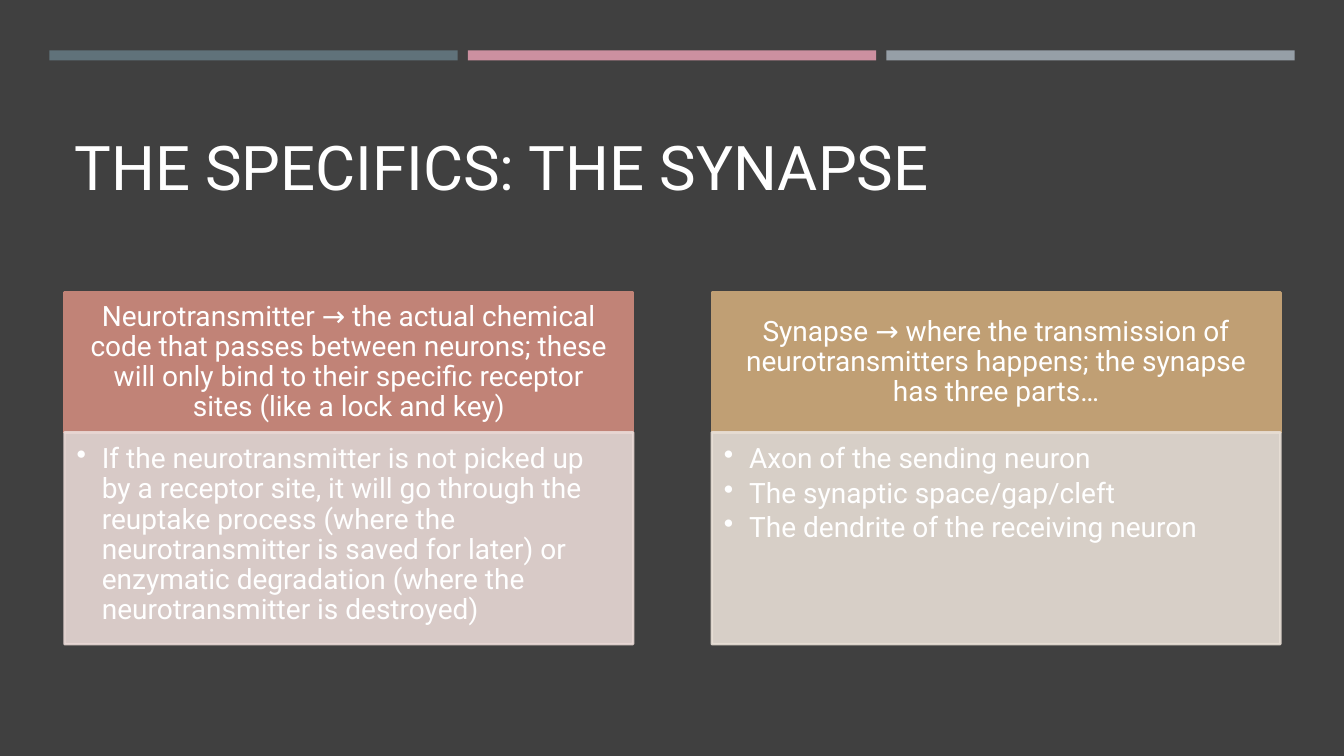
"""Build the slide on the synapse: a title over two definition cards."""
import pptx
import pptx.util
import pptx.dml.color
import pptx.enum.shapes
import pptx.enum.text
import pptx.oxml
import pptx.oxml.ns

Inches, Pt = pptx.util.Inches, pptx.util.Pt
RGB = pptx.dml.color.RGBColor
ALIGN, ANCHOR = pptx.enum.text.PP_ALIGN, pptx.enum.text.MSO_ANCHOR
RECT = pptx.enum.shapes.MSO_SHAPE.RECTANGLE

TITLE = "THE SPECIFICS: THE SYNAPSE"
CARDS = [
    {
        "head": "Neurotransmitter → the actual chemical code that passes between neurons; "
                "these will only bind to their specific receptor sites (like a lock and key)",
        "points": [
            "If the neurotransmitter is not picked up by a receptor site, it will go through "
            "the reuptake process (where the neurotransmitter is saved for later) or "
            "enzymatic degradation (where the neurotransmitter is destroyed)",
        ],
        "colors": ("rose", "pale rose"),
    },
    {
        "head": "Synapse → where the transmission of neurotransmitters happens; "
                "the synapse has three parts…",
        "points": [
            "Axon of the sending neuron",
            "The synaptic space/gap/cleft",
            "The dendrite of the receiving neuron",
        ],
        "colors": ("sand", "pale sand"),
    },
]
BARS = ["slate", "pink", "silver"]
COLORS = {
    "background": "404040", "text": "FFFFFF",
    "slate": "60727A", "pink": "CC90A0", "silver": "969FA7",
    "rose": "C18377", "pale rose": "E9D9D6",
    "sand": "C09F74", "pale sand": "E8DFD6",
}
FONT = "Roboto"

BAR_LEFT, BAR_TOP, BAR_W, BAR_H, BAR_STEP = 0.49, 0.5, 4.05, 0.1, 4.15
CARD_LEFT, CARD_TOP, CARD_W, CARD_STEP = 0.64, 2.9, 5.64, 6.42
HEAD_H, BODY_H = 1.39, 2.1


def color(name):
    return RGB.from_string(COLORS[name])


def add_box(s, left, top, width, height, fill, outlined=False, opacity=100):
    sp = s.shapes.add_shape(RECT, Inches(left), Inches(top), Inches(width), Inches(height))
    sp.shadow.inherit = False
    sp.fill.solid()
    sp.fill.fore_color.rgb = color(fill)
    if outlined:
        sp.line.color.rgb = color(fill)
        sp.line.width = Pt(1.75)
    else:
        sp.line.fill.background()
    if opacity < 100:
        for clr in sp.element.spPr.iter(pptx.oxml.ns.qn("a:srgbClr")):
            alpha = pptx.oxml.parse_xml(
                f'<a:alpha {pptx.oxml.ns.nsdecls("a")} val="{opacity * 1000}"/>')
            clr.append(alpha)
    return sp


def add_bullet(p):
    pPr = p._p.get_or_add_pPr()
    pPr.set("marL", str(Inches(0.25)))
    pPr.set("indent", str(-Inches(0.25)))
    pPr.append(pptx.oxml.parse_xml(f'<a:buChar {pptx.oxml.ns.nsdecls("a")} char="•"/>'))


def write(sp, lines, size, insets, anchor, align=ALIGN.LEFT, after=0, bullets=False):
    tf = sp.text_frame
    tf.word_wrap = True
    tf.vertical_anchor = anchor
    tf.margin_left, tf.margin_top, tf.margin_right, tf.margin_bottom = map(Inches, insets)
    tf.text = "\n".join(lines)
    for p in tf.paragraphs:
        p.alignment = align
        p.line_spacing = 0.9
        p.space_after = Pt(after)
        if bullets:
            add_bullet(p)
        for r in p.runs:
            r.font.name = FONT
            r.font.size = Pt(size)
            r.font.color.rgb = color("text")


def add_card(s, left, card):
    head_fill, body_fill = card["colors"]
    head = add_box(s, left, CARD_TOP, CARD_W, HEAD_H, head_fill, outlined=True)
    write(head, [card["head"]], 20, (0.16, 0.09, 0.16, 0.09), ANCHOR.MIDDLE,
          ALIGN.CENTER, after=7)
    body = add_box(s, left, CARD_TOP + HEAD_H, CARD_W, BODY_H, body_fill,
                   outlined=True, opacity=90)
    write(body, card["points"], 20, (0.12, 0.12, 0.16, 0.17), ANCHOR.TOP,
          after=3, bullets=True)


def main():
    prs = pptx.Presentation()
    prs.slide_width, prs.slide_height = Inches(13.33), Inches(7.5)
    s = prs.slides.add_slide(prs.slide_layouts[6])
    s.background.fill.solid()
    s.background.fill.fore_color.rgb = color("background")

    title = s.shapes.add_textbox(Inches(0.64), Inches(0.77), Inches(12.06), Inches(1.3))
    write(title, [TITLE], 44, (0.1, 0.05, 0.1, 0.05), ANCHOR.BOTTOM)
    for i, name in enumerate(BARS):
        add_box(s, BAR_LEFT + i * BAR_STEP, BAR_TOP, BAR_W, BAR_H, name)
    for i, card in enumerate(CARDS):
        add_card(s, CARD_LEFT + i * CARD_STEP, card)
    prs.save("out.pptx")


if __name__ == "__main__":
    main()
